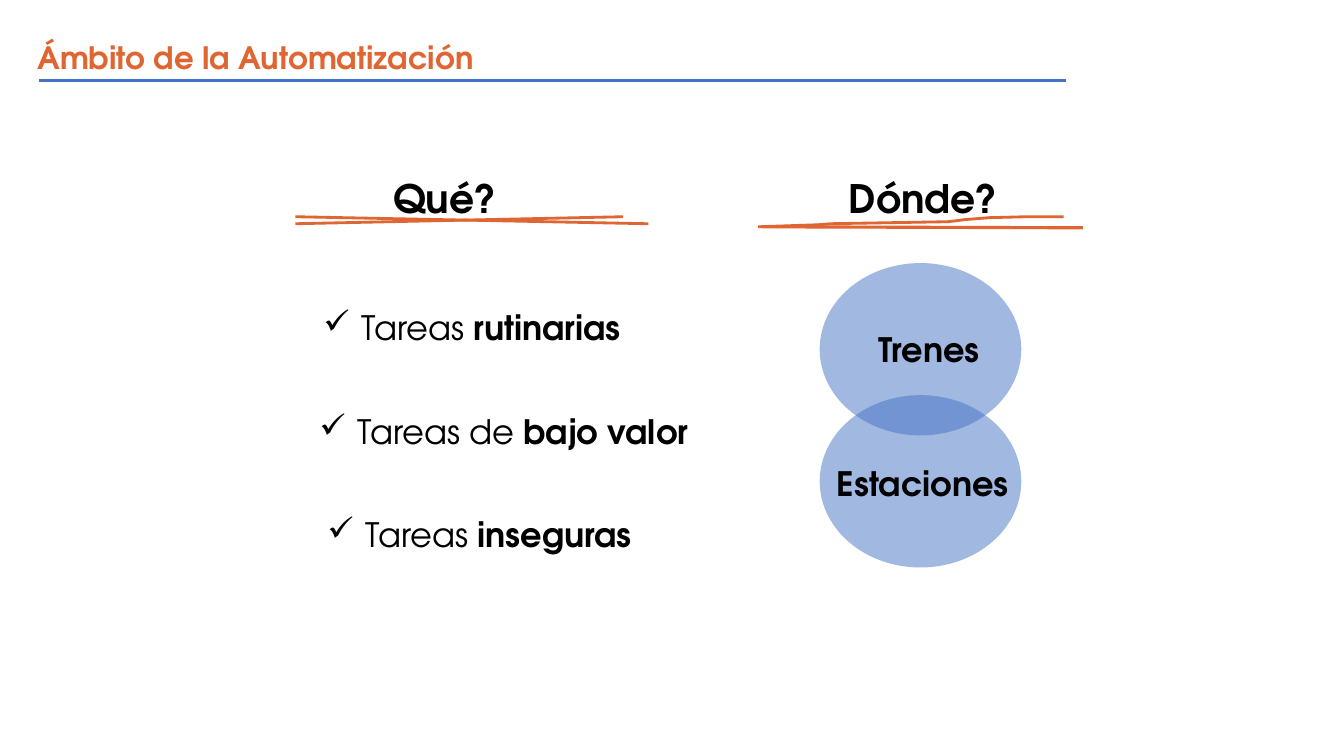
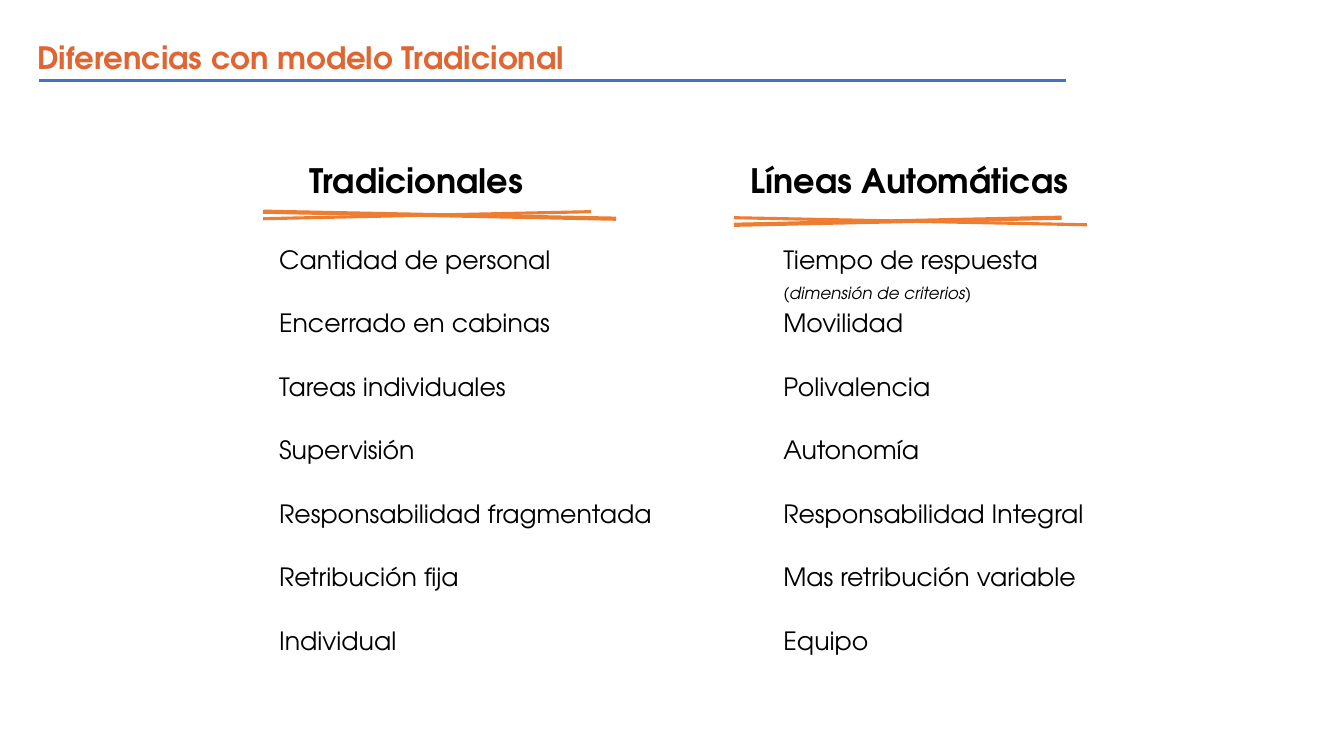
from typing import NamedTuple

from lxml import etree
from pptx import Presentation
from pptx.dml.color import RGBColor
from pptx.enum.shapes import MSO_CONNECTOR, MSO_SHAPE
from pptx.enum.text import MSO_ANCHOR, MSO_AUTO_SIZE, PP_ALIGN
from pptx.oxml.ns import qn
from pptx.util import Inches, Pt

STRAIGHT = MSO_CONNECTOR.STRAIGHT
ELLIPSE = MSO_SHAPE.OVAL
TOP = MSO_ANCHOR.TOP
LEFT = PP_ALIGN.LEFT
FIT_SHAPE = MSO_AUTO_SIZE.SHAPE_TO_FIT_TEXT
NO_FIT = MSO_AUTO_SIZE.NONE

FONT = "TeX Gyre Adventor"
BLACK = RGBColor(0x00, 0x00, 0x00)
BLUE = RGBColor(0x44, 0x72, 0xC4)
RUST = RGBColor(0xDF, 0x65, 0x32)
ORANGE = RGBColor(0xED, 0x7D, 0x31)

ROW_TOP, ROW_PITCH = 2.37, 0.63
SECOND_COLUMN = 5.0


class Label(NamedTuple):
    text: str
    left: float
    top: float
    width: float
    height: float
    size: float = 24


class Task(NamedTuple):
    plain: str
    strong: str
    left: float
    top: float
    width: float


class Difference(NamedTuple):
    traditional: str
    automatic: str
    note: str = ""


SCOPE_LABELS = [
    Label("Estaciones", 8.2, 4.54, 1.93, 0.5),
    Label("Trenes", 8.61, 3.21, 1.22, 0.5),
    Label("Qué?", 3.8, 1.68, 1.24, 0.57, 28),
    Label("Dónde?", 8.32, 1.68, 1.8, 0.57, 28),
]
TASKS = [
    Task("Tareas ", "rutinarias", 2.61, 2.6, 4.57),
    Task("Tareas de ", "bajo valor", 2.57, 3.63, 4.8),
    Task("Tareas ", "inseguras", 2.65, 4.65, 4.17),
]
ELLIPSE_TOPS = [3.92, 2.61]
BRUSH_STROKE = [
    (7.52, 2.25), (8.12, 2.23), (8.24, 2.22), (9.4, 2.2), (9.49, 2.19),
    (9.56, 2.18), (9.81, 2.16), (10.2, 2.15), (10.55, 2.15),
]

MODEL_LABELS = [
    Label("Tradicionales", 2.97, 1.54, 2.36, 0.5),
    Label("Líneas Automáticas", 7.35, 1.54, 3.39, 0.5),
]
DIFFERENCES = [
    Difference("Cantidad de personal", "Tiempo de respuesta", "(dimensión de criterios)"),
    Difference("Encerrado en cabinas", "Movilidad"),
    Difference("Tareas individuales", "Polivalencia"),
    Difference("Supervisión", "Autonomía"),
    Difference("Responsabilidad fragmentada", "Responsabilidad Integral"),
    Difference("Retribución fija", "Mas retribución variable"),
    Difference("Individual", "Equipo"),
]


def add_span(para, text: str, size: float, bold: bool = False,
             italic: bool = False, color: RGBColor = BLACK) -> None:
    span = para.add_run()
    span.text = text
    span.font.name = FONT
    span.font.size = Pt(size)
    span.font.bold = bold
    span.font.italic = italic
    span.font.color.rgb = color


def add_box(page, left: float, top: float, width: float, height: float, wrap: bool = True):
    box = page.shapes.add_textbox(Inches(left), Inches(top), Inches(width), Inches(height))
    box.text_frame.word_wrap = wrap
    box.text_frame.auto_size = FIT_SHAPE
    return box.text_frame


def add_label(page, label: Label) -> None:
    frame = add_box(page, label.left, label.top, label.width, label.height, wrap=False)
    add_span(frame.paragraphs[0], label.text, label.size, bold=True)


def add_line(page, start: tuple[float, float], end: tuple[float, float],
             color: RGBColor, weight: float) -> None:
    line = page.shapes.add_connector(
        STRAIGHT, Inches(start[0]), Inches(start[1]), Inches(end[0]), Inches(end[1]))
    line.line.color.rgb = color
    line.line.width = Pt(weight)
    etree.SubElement(line._element.spPr, qn("a:effectLst"))


def add_crossed_underline(page, left: float, top: float, color: RGBColor,
                          rising_weight: float, falling_weight: float) -> None:
    low = top + 0.07
    add_line(page, (left, low), (left + 3.25, top), color, rising_weight)
    add_line(page, (left, top), (left + 3.5, low), color, falling_weight)


def add_brush_stroke(page, points: list[tuple[float, float]]) -> None:
    corners = [(Inches(x), Inches(y)) for x, y in points]
    builder = page.shapes.build_freeform(*corners[0])
    builder.add_line_segments(corners[1:], close=False)
    stroke = builder.convert_to_shape()
    stroke.shadow.inherit = False
    stroke.fill.background()
    stroke.line.color.rgb = RUST
    stroke.line.width = Pt(2)


def add_ellipse(page, top: float) -> None:
    ellipse = page.shapes.add_shape(ELLIPSE, Inches(8.13), Inches(top), Inches(2), Inches(1.71))
    ellipse.shadow.inherit = False
    ellipse.fill.solid()
    ellipse.fill.fore_color.rgb = BLUE
    ellipse.line.fill.background()
    color = ellipse._element.spPr.find(".//" + qn("a:srgbClr"))
    etree.SubElement(color, qn("a:alpha"), val="50000")


def add_task(page, task: Task) -> None:
    para = add_box(page, task.left, task.top, task.width, 0.78).paragraphs[0]
    properties = para._p.get_or_add_pPr()
    properties.set("marL", str(Inches(0.88)))
    properties.set("indent", str(Inches(-0.38)))
    etree.SubElement(properties, qn("a:buChar"), char="✓")
    para.line_spacing = 2.0
    para.space_after = Pt(12)
    add_span(para, task.plain, 24)
    add_span(para, task.strong, 24, bold=True)


def set_column_tab(para) -> None:
    tabs = etree.SubElement(para._p.get_or_add_pPr(), qn("a:tabLst"))
    etree.SubElement(tabs, qn("a:tab"), pos=str(Inches(SECOND_COLUMN)), algn="l")


def add_difference(page, difference: Difference, top: float) -> None:
    frame = add_box(page, 2.67, top, 8.91, 0.4)
    para = frame.paragraphs[0]
    set_column_tab(para)
    add_span(para, f"{difference.traditional}\t{difference.automatic}", 18)
    if difference.note:
        para = frame.add_paragraph()
        set_column_tab(para)
        add_span(para, "\t", 18)
        add_span(para, difference.note, 12, italic=True)


def add_page(deck, heading: str):
    """Add a slide with the shared title and the rule under it."""
    page = deck.slides.add_slide(deck.slide_layouts[5])
    title = page.shapes.title
    title.left, title.top = Inches(0.27), Inches(0.33)
    title.width, title.height = Inches(8.75), Inches(0.62)
    frame = title.text_frame
    frame.word_wrap = True
    frame.auto_size = NO_FIT
    frame.vertical_anchor = TOP
    para = frame.paragraphs[0]
    para.alignment = LEFT
    add_span(para, heading, 22, bold=True, color=RUST)
    add_line(page, (0.39, 0.8), (10.57, 0.8), BLUE, 2)
    return page


def build_scope(deck) -> None:
    page = add_page(deck, "Ámbito de la Automatización")
    for top in ELLIPSE_TOPS:
        add_ellipse(page, top)
    for label in SCOPE_LABELS:
        add_label(page, label)
    add_crossed_underline(page, 2.93, 2.15, RUST, 2, 2)
    add_brush_stroke(page, BRUSH_STROKE)
    add_line(page, (7.57, 2.25), (10.74, 2.26), RUST, 2.25)
    for task in TASKS:
        add_task(page, task)


def build_differences(deck) -> None:
    page = add_page(deck, "Diferencias con modelo Tradicional")
    for label in MODEL_LABELS:
        add_label(page, label)
    add_crossed_underline(page, 2.61, 2.1, ORANGE, 2.25, 3)
    add_crossed_underline(page, 7.28, 2.16, ORANGE, 3, 2.25)
    for index, difference in enumerate(DIFFERENCES):
        add_difference(page, difference, ROW_TOP + index * ROW_PITCH)


def main() -> None:
    deck = Presentation()
    deck.slide_width, deck.slide_height = Inches(13.33), Inches(7.5)
    build_scope(deck)
    build_differences(deck)
    deck.save("out.pptx")


if __name__ == "__main__":
    main()
